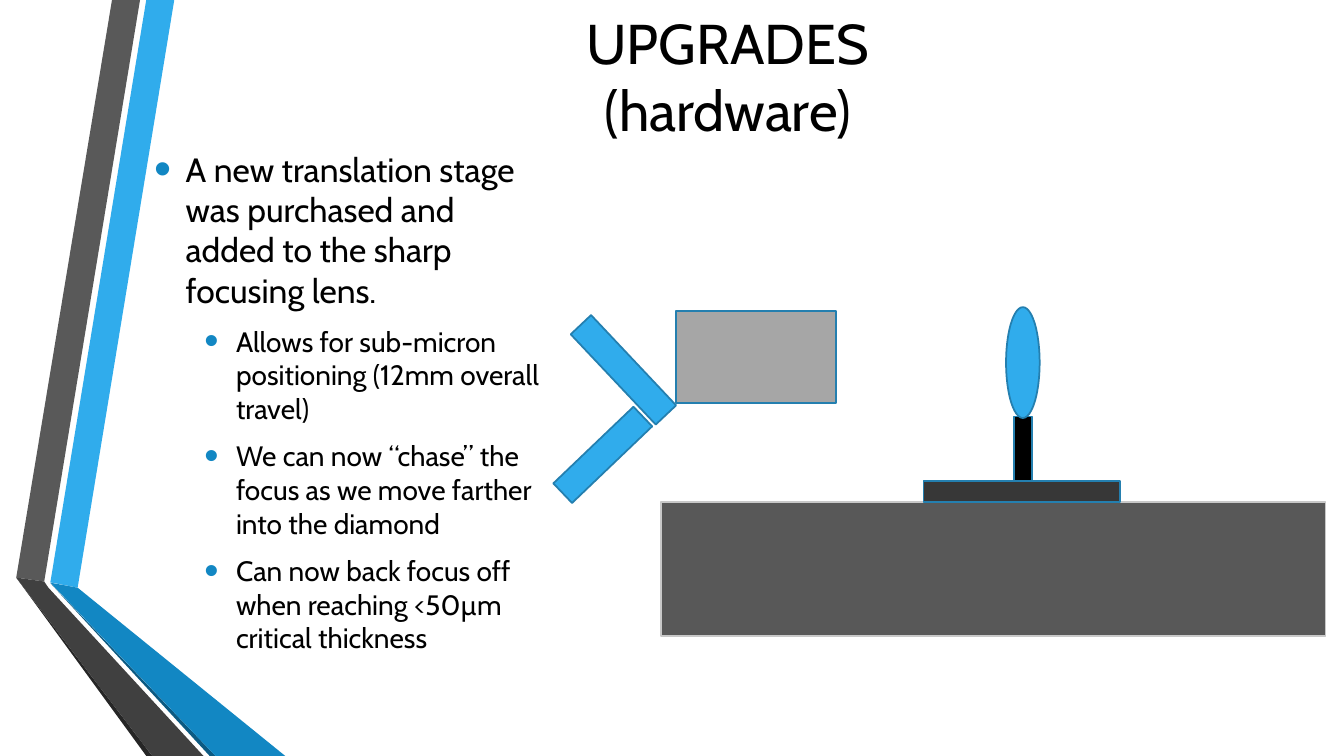
from pptx import Presentation
from pptx.util import Pt
from pptx.dml.color import RGBColor as RGB
from pptx.enum.shapes import MSO_SHAPE as Kind
from pptx.enum.text import MSO_ANCHOR as Anchor, PP_ALIGN as Align
from pptx.oxml.ns import qn
from lxml.etree import SubElement as Sub

COLORS = {
    "text": "000000", "blue": "30ACEC", "deep": "1287C3", "navy": "0C5A82",
    "edge": "247FAF", "gray": "595959", "coal": "404040", "shade": "262626",
    "bench": "585858", "rim": "C8C8C8", "box": "A6A6A6", "base": "373737",
}


class Deck:
    font = "Cabin"
    line = 1.25

    def __init__(self, wide, high):
        self.prs = Presentation()
        self.prs.slide_width, self.prs.slide_height = Pt(wide), Pt(high)
        self.slide = self.prs.slides.add_slide(self.prs.slide_layouts[6])
        self.shapes = self.slide.shapes

    def color(self, name):
        return RGB.from_string(COLORS[name])

    def paint(self, shape, fill, edge=None):
        shape.shadow.inherit = False
        shape.fill.solid()
        shape.fill.fore_color.rgb = self.color(fill)
        if edge:
            shape.line.color.rgb = self.color(edge)
            shape.line.width = Pt(self.line)
        else:
            shape.line.fill.background()

    def band(self, fill, *points):
        start, *rest = [(Pt(x), Pt(y)) for x, y in points]
        build = self.shapes.build_freeform(*start)
        build.add_line_segments(rest, close=True)
        self.paint(build.convert_to_shape(), fill)

    def shape(self, spot, fill, edge="edge", turn=0, kind=Kind.RECTANGLE):
        item = self.shapes.add_shape(kind, *map(Pt, spot))
        item.rotation = turn
        self.paint(item, fill, edge)

    def frame(self, spot, **form):
        frame = self.shapes.add_textbox(*map(Pt, spot)).text_frame
        for name, value in {"word_wrap": True, **form}.items():
            setattr(frame, name, value)
        return frame

    def para(self, frame, text, size, first, **form):
        para = frame.paragraphs[0] if first else frame.add_paragraph()
        for name, value in form.items():
            setattr(para, name, value)
        run = para.add_run()
        run.text = text
        for name, value in {"name": self.font, "size": Pt(size)}.items():
            setattr(run.font, name, value)
        run.font.color.rgb = self.color("text")
        return para

    def title(self, spot, lines, size):
        frame = self.frame(spot, margin_top=0, vertical_anchor=Anchor.TOP)
        for i, text in enumerate(lines):
            self.para(frame, text, size, i == 0, alignment=Align.CENTER)

    def bullets(self, spot, items):
        frame = self.frame(spot, vertical_anchor=Anchor.MIDDLE)
        for i, (level, text) in enumerate(items):
            size = 24 - 4 * level
            para = self.para(frame, text, size, i == 0, level=level,
                             space_before=Pt(size / 5), space_after=Pt(6))
            props = para._p.get_or_add_pPr()
            props.set("marL", str(Pt(22.5 + 36 * level)))
            props.set("indent", str(Pt(-22.5)))
            tint = Sub(props, qn("a:buClr"))
            Sub(tint, qn("a:srgbClr"), val=COLORS["deep"])
            Sub(props, qn("a:buSzPct"), val="145000")
            Sub(props, qn("a:buFont"), typeface="Arial")
            Sub(props, qn("a:buChar"), char="•")


def main():
    deck = Deck(960, 540)

    # Folded ribbons at the left
    deck.band("blue", (36, 416), (55.5, 419.8), (124.5, 0), (104.5, 0))
    deck.band("gray", (100, 0), (80, 0), (11.6, 412.6), (31.6, 415.4))
    deck.band("shade", (11.6, 412.6), (104.5, 540), (108.8, 540))
    deck.band("navy", (36, 416.6), (149.8, 540), (154, 540))
    deck.band("deep", (36, 416.2), (154, 540), (203.8, 540), (55.5, 419.8))
    deck.band("coal", (145.4, 540), (34.6, 419.8), (31.6, 415.4),
              (11.6, 412.6), (108.8, 540))

    # Text
    deck.bullets((103, 66.2, 290.2, 441.4), [
        (0, "A new translation stage was purchased and added to the sharp "
            "focusing lens."),
        (1, "Allows for sub-micron positioning (12mm overall travel)"),
        (1, "We can now “chase” the focus as we move farther into the "
            "diamond"),
        (1, "Can now back focus off when reaching <50µm critical thickness"),
    ])
    deck.title((125.3, 5.8, 789.1, 110), ["UPGRADES", "(hardware)"], 40)

    # Bench, camera box and mirrors
    deck.shape((472.3, 358.6, 474.5, 95.8), "bench", "rim")
    deck.shape((482.6, 222, 114.6, 66), "box")
    deck.shape((401, 254.2, 88.6, 20), "blue", turn=46.7)
    deck.shape((391, 315.2, 79.2, 19.4), "blue", turn=316.3)

    # Lens on its post
    deck.shape((659.7, 343.4, 140.4, 15.2), "base")
    deck.shape((724.3, 297.6, 13, 45.8), "text")
    deck.shape((718.6, 219.4, 24, 79.2), "blue", kind=Kind.OVAL)

    deck.prs.save("out.pptx")


if __name__ == "__main__":
    main()
